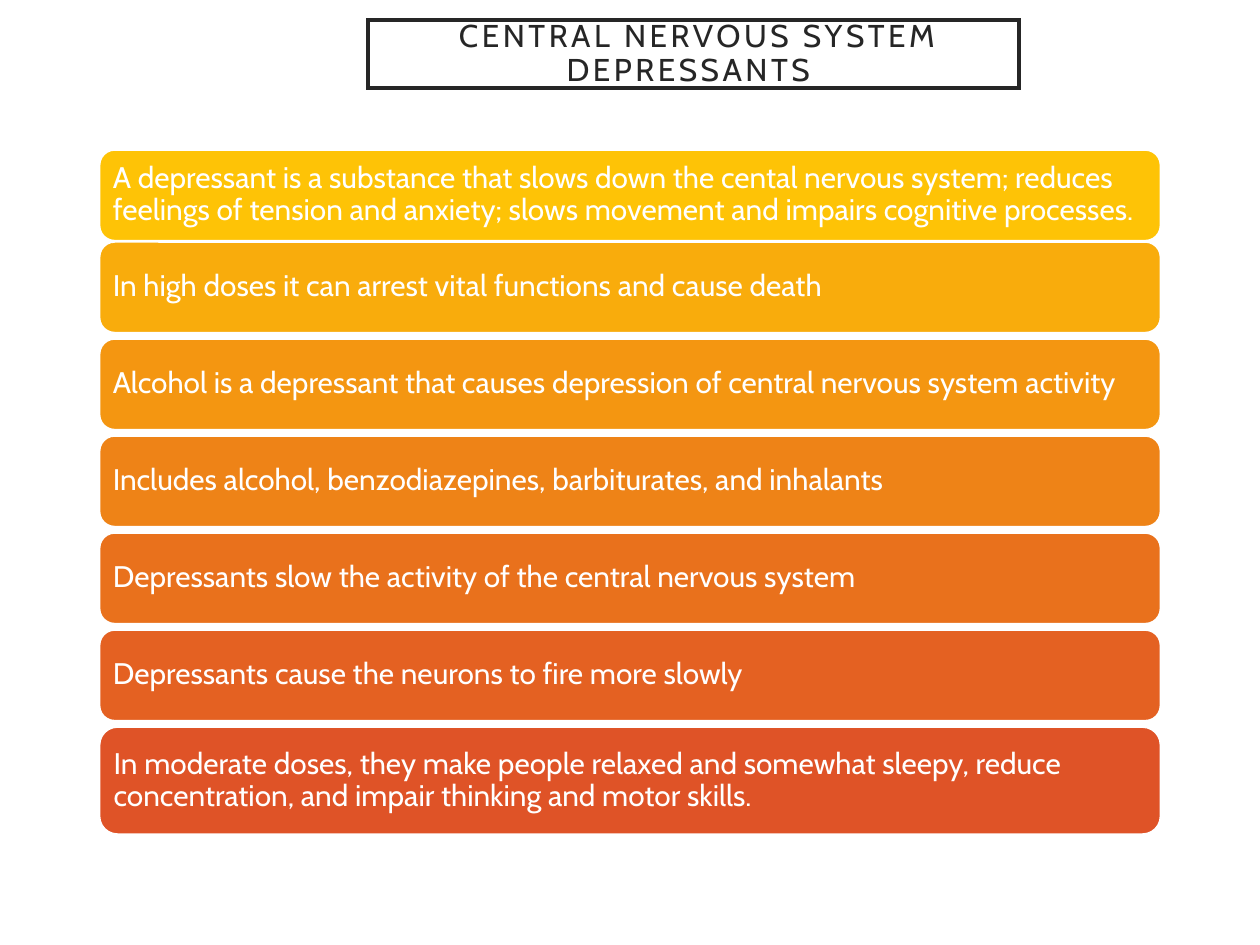
from lxml import etree
from pptx import Presentation
from pptx.dml.color import RGBColor
from pptx.enum import shapes, text
from pptx.oxml.ns import qn
from pptx.util import Inches, Pt

FONT = "Cabin"
WHITE = RGBColor(0xFF, 0xFF, 0xFF)
CHARCOAL = RGBColor(0x26, 0x26, 0x26)

HEADING = " CENTRAL NERVOUS SYSTEM DEPRESSANTS "
FACTS = [
    ("A depressant is a substance that slows down the cental nervous system; "
     "reduces feelings of tension and anxiety; slows movement and impairs "
     "cognitive processes.", RGBColor(0xFE, 0xC3, 0x06)),
    ("In high doses it can arrest vital functions and cause death",
     RGBColor(0xF9, 0xAC, 0x0C)),
    ("Alcohol is a depressant that causes depression of central nervous "
     "system activity", RGBColor(0xF4, 0x96, 0x11)),
    ("Includes alcohol, benzodiazepines, barbiturates, and inhalants",
     RGBColor(0xEE, 0x83, 0x17)),
    ("Depressants slow the activity of the central nervous system",
     RGBColor(0xE9, 0x71, 0x1C)),
    ("Depressants cause the neurons to fire more slowly",
     RGBColor(0xE4, 0x61, 0x22)),
    ("In moderate doses, they make people relaxed and somewhat sleepy, reduce "
     "concentration, and impair thinking and motor skills.",
     RGBColor(0xDF, 0x53, 0x27)),
]

BAR_LEFT, BAR_WIDTH = 0.79, 8.42
BAR_HEIGHT, LAST_HEIGHT = 0.72, 0.85
FIRST_TOP, SECOND_TOP = 1.19, 1.92
BAR_GAP = 0.05


def paint(shape, fill, line, line_width):
    shape.fill.solid()
    shape.fill.fore_color.rgb = fill
    shape.line.color.rgb = line
    shape.line.width = Pt(line_width)


def write(shape, wording, size, color, align, side_inset, end_inset):
    frame = shape.text_frame
    frame.text = wording
    frame.word_wrap = True
    frame.auto_size = text.MSO_AUTO_SIZE.NONE
    frame.vertical_anchor = text.MSO_ANCHOR.MIDDLE
    frame.margin_left = frame.margin_right = Inches(side_inset)
    frame.margin_top = frame.margin_bottom = Inches(end_inset)
    paragraph = frame.paragraphs[0]
    paragraph.alignment = align
    paragraph.line_spacing = 0.9
    font = paragraph.runs[0].font
    font.name, font.size = FONT, Pt(size)
    font.color.rgb = color


def add_heading(slide):
    heading = slide.shapes.title
    heading.left, heading.top = Inches(2.92), Inches(0.16)
    heading.width, heading.height = Inches(5.17), Inches(0.54)
    paint(heading, WHITE, CHARCOAL, 2.5)
    outline = heading.fill._xPr.find(qn("a:ln"))
    etree.SubElement(outline, qn("a:miter"), lim="800000")
    write(heading, HEADING, 18, CHARCOAL, text.PP_ALIGN.CENTER, 0.2, 0)
    run = heading.text_frame.paragraphs[0].runs[0]
    run.font._element.set("spc", "200")  # letter spacing of 2 pt


def add_fact_bar(slide, top, height, wording, color):
    bar = slide.shapes.add_shape(
        shapes.MSO_SHAPE.ROUNDED_RECTANGLE,
        Inches(BAR_LEFT), Inches(top), Inches(BAR_WIDTH), Inches(height))
    bar.shadow.inherit = False
    paint(bar, color, WHITE, 1)
    write(bar, wording, 17, WHITE, text.PP_ALIGN.LEFT, 0.07, 0.07)


def main():
    deck = Presentation()
    deck.slide_width, deck.slide_height = Inches(10), Inches(7.5)
    slide = deck.slides.add_slide(deck.slide_layouts[5])
    add_heading(slide)
    last = len(FACTS) - 1
    for index, (wording, color) in enumerate(FACTS):
        # The first two bars nearly touch; the rest are evenly spaced.
        top = SECOND_TOP + (index - 1) * (BAR_HEIGHT + BAR_GAP) if index else FIRST_TOP
        height = LAST_HEIGHT if index == last else BAR_HEIGHT
        add_fact_bar(slide, top, height, wording, color)
    deck.save("out.pptx")


if __name__ == "__main__":
    main()
